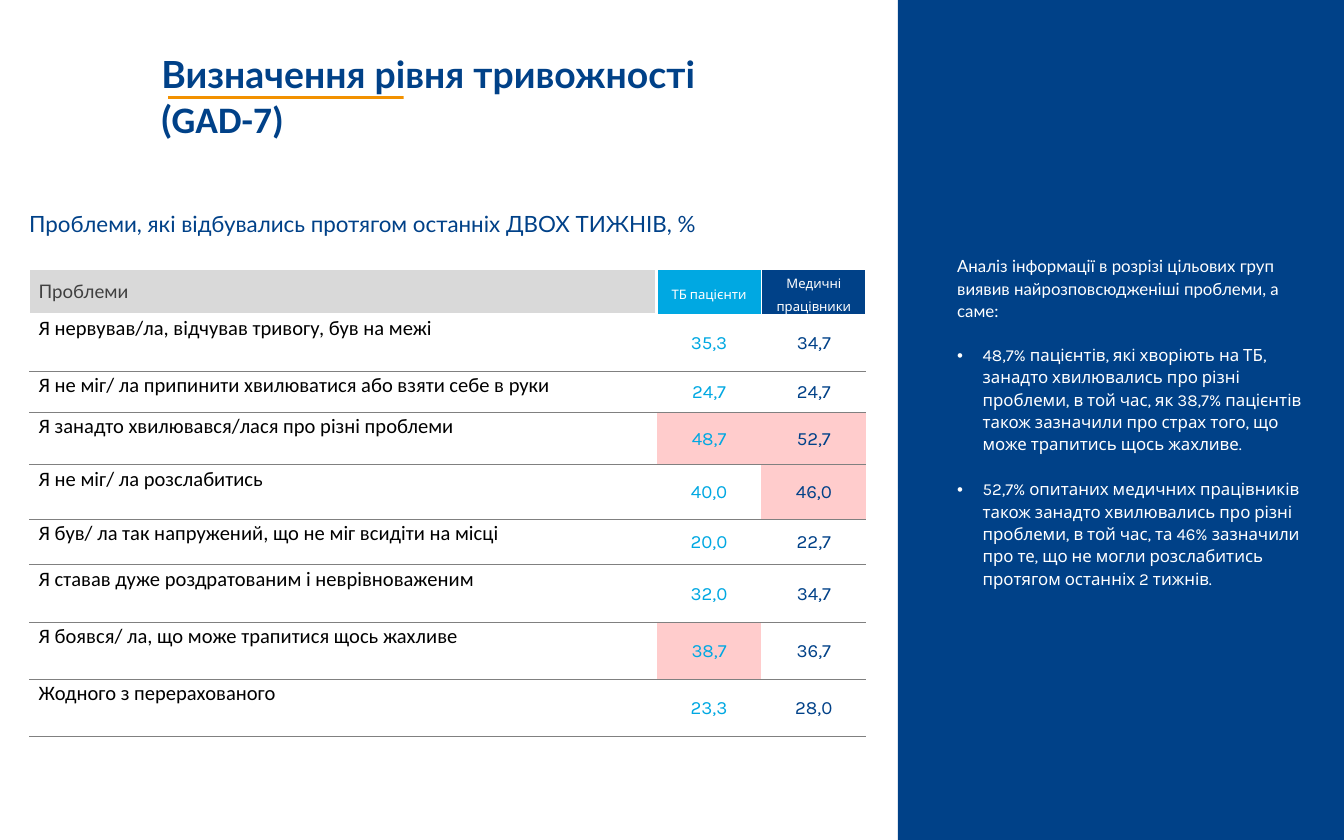
import dataclasses

import lxml.etree
import pptx
import pptx.dml.color
import pptx.enum.shapes
import pptx.enum.text
import pptx.oxml.ns
import pptx.util

Cm = pptx.util.Cm
Pt = pptx.util.Pt
qn = pptx.oxml.ns.qn
PLAIN = "{2D5ABB26-0587-4C30-8999-92F81FD0307C}"
MID = pptx.enum.text.MSO_ANCHOR.MIDDLE
MITTE = pptx.enum.text.PP_ALIGN.CENTER


@dataclasses.dataclass(frozen=True)
class Theme:
    """Colours, fonts and type sizes."""
    navy: str = "004188"
    sky: str = "00A8E2"
    gold: str = "F29100"
    pink: str = "FFCCCC"
    grey: str = "D9D9D9"
    rule: str = "808080"
    dark: str = "404040"
    black: str = "000000"
    white: str = "FFFFFF"
    head: str = "Lato"
    body: str = "Calibri"
    data: str = "Karla"
    title: int = 20
    sub: int = 12
    item: int = 11
    value: int = 10
    note: int = 9
    label: int = 7


T = Theme()

ROWS = [
    ("Я нервував/ла, відчував тривогу, був на межі", "35,3", "34,7", 1.07),
    ("Я не міг/ ла припинити хвилюватися або взяти себе в руки", "24,7", "24,7", 0.77),
    ("Я занадто хвилювався/лася про різні проблеми", "48,7", "52,7", 1),
    ("Я не міг/ ла розслабитись", "40,0", "46,0", 1.03),
    ("Я був/ ла так напружений, що не міг всидіти на місці", "20,0", "22,7", 0.86),
    ("Я ставав дуже роздратованим і неврівноваженим", "32,0", "34,7", 1.09),
    ("Я боявся/ ла, що може трапитися щось жахливе", "38,7", "36,7", 1.08),
    ("Жодного з перерахованого", "23,3", "28,0", 1.07),
]
HOT = {(2, 1), (2, 2), (3, 2), (6, 1)}
INTRO = "Аналіз інформації в розрізі цільових груп виявив найрозповсюдженіші проблеми, а саме:"
NOTES = [
    "48,7% пацієнтів, які хворіють на ТБ, занадто хвилювались про різні проблеми, "
    "в той час, як 38,7% пацієнтів також зазначили про страх того, що може трапитись щось жахливе.",
    "52,7% опитаних медичних працівників також занадто хвилювались про різні проблеми, "
    "в той час, та 46% зазначили про те, що не могли розслабитись протягом останніх 2 тижнів.",
]


def rgb(code):
    """Turn a hex code into a colour."""
    return pptx.dml.color.RGBColor.from_string(code)


def add_run(para, text, face, size, tint, bold=False):
    """Add one styled run to a paragraph."""
    run = para.add_run()
    run.text = text
    font = run.font
    font.name, font.size, font.bold = face, Pt(size), bold
    font.color.rgb = rgb(tint)


def add_bar(slide, left, top, width, height, tint):
    """Add a plain filled bar."""
    bar = slide.shapes.add_shape(
        pptx.enum.shapes.MSO_SHAPE.RECTANGLE, Cm(left), Cm(top), Cm(width), Cm(height))
    bar.shadow.inherit = False
    bar.fill.solid()
    bar.fill.fore_color.rgb = rgb(tint)
    bar.line.fill.background()


def add_grid(slide, left, top, cols, rows):
    """Add an unstyled table with the given widths and heights."""
    frame = slide.shapes.add_table(
        len(rows), len(cols), Cm(left), Cm(top), Cm(sum(cols)), Cm(sum(rows)))
    grid = frame.table
    grid.first_row = grid.horz_banding = False
    frame.element.find(".//" + qn("a:tableStyleId")).text = PLAIN
    for col, width in zip(grid.columns, cols):
        col.width = Cm(width)
    for row, height in zip(grid.rows, rows):
        row.height = Cm(height)
    return grid


def set_edge(cell, side, tint, width):
    """Draw one border of a cell."""
    props = cell._tc.get_or_add_tcPr()
    line = lxml.etree.SubElement(props, qn("a:ln" + side), w=str(Pt(width)))
    fill = lxml.etree.SubElement(line, qn("a:solidFill"))
    lxml.etree.SubElement(fill, qn("a:srgbClr"), val=tint)


def set_cell(cell, edges, fill=None, pad=0.18, anchor=None):
    """Set borders, fill, insets and anchor of a cell."""
    cell.margin_left = cell.margin_right = Cm(pad)
    cell.margin_top = cell.margin_bottom = 0
    cell.vertical_anchor = anchor
    for side, (tint, width) in edges.items():
        set_edge(cell, side, tint, width)
    if fill:
        cell.fill.solid()
        cell.fill.fore_color.rgb = rgb(fill)
    else:
        cell.fill.background()


def put_text(cell, lines, face, size, tint, space=1.07, align=None):
    """Write lines of one style into a cell."""
    for i, text in enumerate(lines):
        para = cell.text_frame.add_paragraph() if i else cell.text_frame.paragraphs[0]
        para.line_spacing, para.alignment = space, align
        add_run(para, text, face, size, tint)


def add_title(slide):
    """Add the slide title."""
    box = slide.shapes.add_textbox(Cm(2.8), Cm(0.84), Cm(11.33), Cm(1.96))
    box.text_frame.word_wrap = True
    para = box.text_frame.paragraphs[0]
    add_run(para, "Визначення рівня тривожності (", T.head, T.title, T.navy, True)
    add_run(para, "GAD-7)", T.body, T.title, T.navy, True)


def add_notes(slide):
    """Add the side panel findings."""
    cell = add_grid(slide, 17.91, 4.8, [7.19], [6.53]).cell(0, 0)
    set_cell(cell, {})
    put_text(cell, [INTRO], T.head, T.note, T.white, Pt(12))
    for note in NOTES:
        para = cell.text_frame.add_paragraph()
        para.line_spacing = para.space_before = Pt(12)
        props = para._p.get_or_add_pPr()
        props.set("marL", str(Cm(0.48)))
        props.set("indent", str(-Cm(0.48)))
        lxml.etree.SubElement(props, qn("a:buFont"), typeface="Arial")
        lxml.etree.SubElement(props, qn("a:buChar"), char="•")
        add_run(para, note, T.data, T.note, T.white)


def add_scores(slide):
    """Add the table of problems by group."""
    grid = add_grid(slide, 0.55, 3.94, [11.86, 1.98, 1.98],
                    [1.14, 0.84] + [row[-1] for row in ROWS])
    top = grid.cell(0, 0)
    top.merge(grid.cell(0, 2))
    set_cell(top, dict.fromkeys("LTB", (T.white, 1.5)), pad=0)
    put_text(top, ["Проблеми, які відбувались протягом останніх ДВОХ ТИЖНІВ, %"],
             T.head, T.sub, T.navy)
    first = grid.cell(1, 0)
    set_cell(first, dict.fromkeys("LRTB", (T.white, 1.5)), T.grey, anchor=MID)
    put_text(first, ["Проблеми"], T.head, T.value, T.dark, Pt(12))
    heads = [(["ТБ пацієнти"], T.sky), (["Медичні", "працівники"], T.navy)]
    for c, (lines, tint) in enumerate(heads, 1):
        cell = grid.cell(1, c)
        set_cell(cell, dict.fromkeys("LRTB", (T.white, 1)), tint, 0, MID)
        put_text(cell, lines, T.data, T.label, T.white, 1.5, MITTE)
    for r, (item, sick, staff, _) in enumerate(ROWS):
        edge = (T.rule, 0.25)
        edges = {"T": edge if r else (T.white, 1), "B": edge}
        cell = grid.cell(r + 2, 0)
        set_cell(cell, edges)
        put_text(cell, [item], T.body, T.item, T.black)
        for c, (value, tint) in enumerate([(sick, T.sky), (staff, T.navy)], 1):
            cell = grid.cell(r + 2, c)
            set_cell(cell, edges, T.pink if (r, c) in HOT else None, anchor=MID)
            put_text(cell, [value], T.data, T.value, tint, align=MITTE)


def main():
    """Build and save the slide."""
    deck = pptx.Presentation()
    deck.slide_width, deck.slide_height = Cm(25.4), Cm(15.88)
    slide = deck.slides.add_slide(deck.slide_layouts[6])
    add_bar(slide, 16.97, 0, 8.43, 15.88, T.navy)
    add_bar(slide, 3.18, 1.82, 4.45, 0.05, T.gold)
    add_notes(slide)
    add_scores(slide)
    add_title(slide)
    deck.save("out.pptx")


if __name__ == "__main__":
    main()
